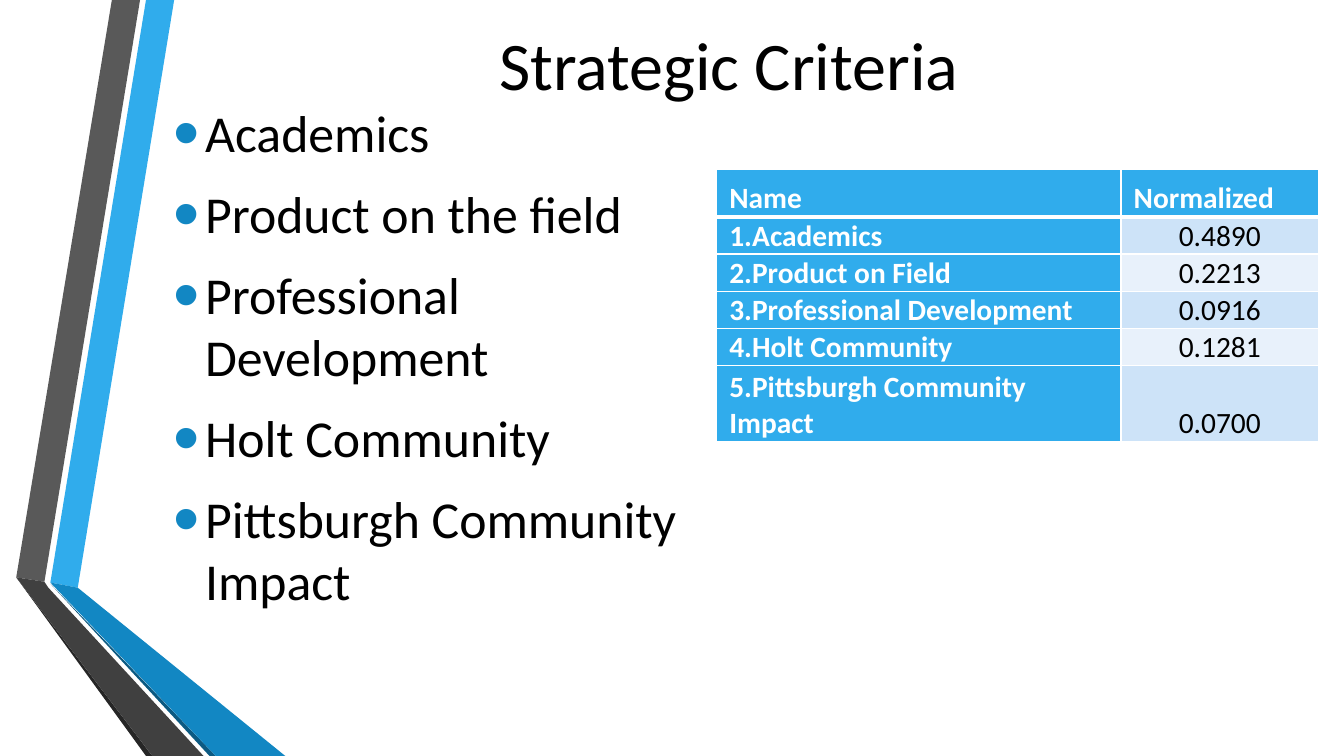
from lxml import etree
from pptx import Presentation
from pptx import util as u
from pptx.dml.color import RGBColor
from pptx.enum import text
from pptx.oxml import ns

FONT = "Calibri"
BLACK = RGBColor(0x00, 0x00, 0x00)
WHITE = RGBColor(0xFF, 0xFF, 0xFF)
SKY = RGBColor(0x30, 0xAC, 0xEC)
BLUE = RGBColor(0x12, 0x87, 0xC3)
NAVY = RGBColor(0x0C, 0x5A, 0x82)
GREY = RGBColor(0x59, 0x59, 0x59)
CHARCOAL = RGBColor(0x40, 0x40, 0x40)
SOOT = RGBColor(0x26, 0x26, 0x26)
BANDS = (RGBColor(0xCD, 0xE3, 0xF8), RGBColor(0xE8, 0xF1, 0xFB))

BOTTOM = 19.05
# Corner points of the folded ribbons, in centimetres, from back to front
RIBBONS = [
    (SKY, [(1.27, 14.68), (1.96, 14.81), (4.39, 0), (3.68, 0)]),
    (GREY, [(3.53, 0), (2.82, 0), (0.41, 14.55), (1.12, 14.66)]),
    (SOOT, [(0.41, 14.55), (3.68, BOTTOM), (3.84, BOTTOM)]),
    (NAVY, [(1.27, 14.71), (5.28, BOTTOM), (5.44, BOTTOM)]),
    (BLUE, [(1.27, 14.68), (5.44, BOTTOM), (7.19, BOTTOM), (1.96, 14.81)]),
    (CHARCOAL, [(5.13, BOTTOM), (1.22, 14.81), (1.12, 14.66), (0.41, 14.55),
                (3.84, BOTTOM)]),
]
CRITERIA = ["Academics", "Product on the field", "Professional Development",
            "Holt Community", "Pittsburgh Community Impact"]
WEIGHTS = [
    ("Name", "Normalized"),
    ("1.Academics", "0.4890"),
    ("2.Product on Field", "0.2213"),
    ("3.Professional Development", "0.0916"),
    ("4.Holt Community", "0.1281"),
    ("5.Pittsburgh Community Impact", "0.0700"),
]
COLUMN_WIDTHS = (10.19, 4.98)
ROW_HEIGHTS = (1.19, 0.94, 0.94, 0.94, 0.94, 1.9)


def add_run(paragraph, words, size, color=BLACK, bold=False):
    run = paragraph.add_run()
    run.text = words
    run.font.name = FONT
    run.font.size = u.Pt(size)
    run.font.bold = bold
    run.font.color.rgb = color


def add_ribbon(slide, color, corners):
    points = [(u.Cm(x), u.Cm(y)) for x, y in corners]
    builder = slide.shapes.build_freeform(*points[0])
    builder.add_line_segments(points[1:], close=True)
    ribbon = builder.convert_to_shape()
    ribbon.shadow.inherit = False
    ribbon.fill.solid()
    ribbon.fill.fore_color.rgb = color
    ribbon.line.fill.background()


def set_title(slide, words):
    title = slide.shapes.title
    title.left, title.top = u.Cm(4.45), u.Cm(0.43)
    title.width, title.height = u.Cm(27.84), u.Cm(2.34)
    frame = title.text_frame
    frame.vertical_anchor = text.MSO_ANCHOR.MIDDLE
    frame.paragraphs[0].alignment = text.PP_ALIGN.CENTER
    add_run(frame.paragraphs[0], words, 48.6)


def set_bullet(paragraph):
    properties = paragraph._p.get_or_add_pPr()
    properties.set("marL", str(u.Cm(0.79)))
    properties.set("indent", str(-u.Cm(0.79)))
    color = etree.SubElement(properties, ns.qn("a:buClr"))
    etree.SubElement(color, ns.qn("a:srgbClr"), val=str(BLUE))
    etree.SubElement(properties, ns.qn("a:buSzPct"), val="145000")
    etree.SubElement(properties, ns.qn("a:buFont"), typeface="Arial")
    etree.SubElement(properties, ns.qn("a:buChar"), char="•")


def add_bullets(slide, items):
    box = slide.shapes.add_textbox(u.Cm(4.13), u.Cm(2.55), u.Cm(13.59), u.Cm(13.2))
    frame = box.text_frame
    frame.word_wrap = True
    frame.margin_top = frame.margin_bottom = 0
    for index, item in enumerate(items):
        paragraph = frame.paragraphs[0] if index == 0 else frame.add_paragraph()
        paragraph.space_after = u.Pt(13.4)
        set_bullet(paragraph)
        add_run(paragraph, item, 37)


def set_borders(cell, top, bottom):
    """Draw white borders; top and bottom are widths in points."""
    properties = cell._tc.get_or_add_tcPr()
    for side, width in (("L", 1), ("R", 1), ("T", top), ("B", bottom)):
        line = etree.SubElement(properties, ns.qn(f"a:ln{side}"), w=str(u.Pt(width)))
        fill = etree.SubElement(line, ns.qn("a:solidFill"))
        etree.SubElement(fill, ns.qn("a:srgbClr"), val=str(WHITE))


def fill_cell(cell, words, row, column):
    is_value = row > 0 and column > 0
    set_borders(cell, top=3 if row == 1 else 1, bottom=3 if row == 0 else 1)
    cell.fill.solid()
    cell.fill.fore_color.rgb = BANDS[(row - 1) % 2] if is_value else SKY
    cell.vertical_anchor = text.MSO_ANCHOR.BOTTOM
    cell.margin_left = cell.margin_right = u.Cm(0.32)
    cell.margin_top = cell.margin_bottom = 0
    paragraph = cell.text_frame.paragraphs[0]
    if is_value:
        paragraph.alignment = text.PP_ALIGN.CENTER
    add_run(paragraph, words, 21, BLACK if is_value else WHITE, not is_value)


def add_weights_table(slide):
    table = slide.shapes.add_table(
        len(WEIGHTS), len(COLUMN_WIDTHS), u.Cm(18.06), u.Cm(4.27),
        u.Cm(sum(COLUMN_WIDTHS)), u.Cm(sum(ROW_HEIGHTS))).table
    table.first_col = True
    for column, width in zip(table.columns, COLUMN_WIDTHS):
        column.width = u.Cm(width)
    for row, height in zip(table.rows, ROW_HEIGHTS):
        row.height = u.Cm(height)
    for row, entries in enumerate(WEIGHTS):
        for column, words in enumerate(entries):
            fill_cell(table.cell(row, column), words, row, column)


def main():
    deck = Presentation()
    deck.slide_width, deck.slide_height = u.Cm(33.87), u.Cm(BOTTOM)
    slide = deck.slides.add_slide(deck.slide_layouts[5])
    for color, corners in RIBBONS:
        add_ribbon(slide, color, corners)
    set_title(slide, "Strategic Criteria")
    add_bullets(slide, CRITERIA)
    add_weights_table(slide)
    deck.save("out.pptx")


if __name__ == "__main__":
    main()
